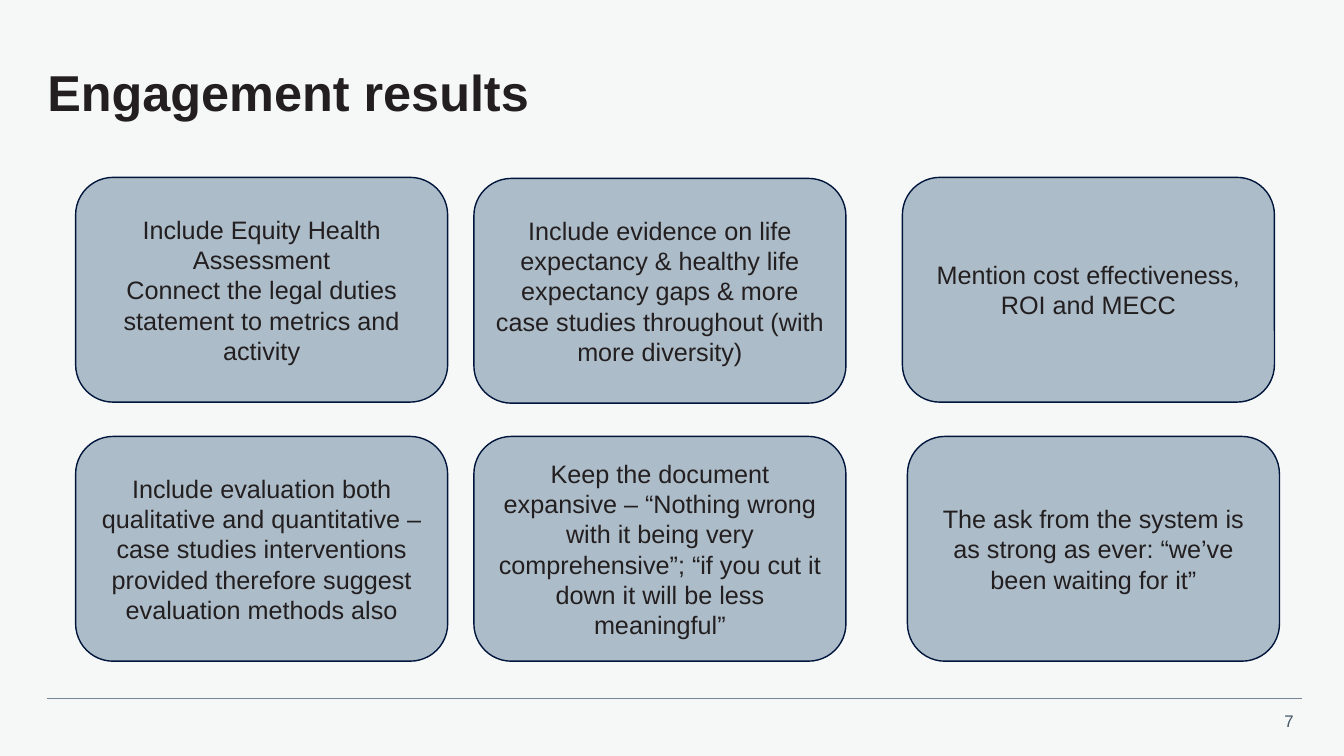
from dataclasses import dataclass

from lxml import etree
from pptx import Presentation
from pptx import util as u
from pptx.dml.color import RGBColor
from pptx.enum import shapes, text
from pptx.oxml import ns
from pptx.slide import Slide
from pptx.text.text import TextFrame

COLORS = {
    "back": "F6F8F8",
    "ink": "231F20",
    "card": "ACBCC8",
    "edge": "00153B",
    "rule": "768692",
    "page": "425563",
}
CARD_W, CARD_H = 3.69, 2.23
TOP, LOW = 1.76, 4.33
LEFT, MID = 0.75, 4.7


@dataclass
class Card:
    x: float
    y: float
    words: str


CARDS = [
    Card(LEFT, TOP, "Include Equity Health Assessment\n"
                    "Connect the legal duties statement to metrics and activity"),
    Card(MID, TOP + 0.01, "Include evidence on life expectancy & healthy life expectancy "
                          "gaps & more case studies throughout (with more diversity)"),
    Card(8.95, TOP, "Mention cost effectiveness, ROI and MECC"),
    Card(LEFT, LOW, "Include evaluation both qualitative and quantitative –case studies "
                    "interventions provided therefore suggest evaluation methods also"),
    Card(MID, LOW, "Keep the document expansive – “Nothing wrong with it being very "
                   "comprehensive”; “if you cut it down it will be less meaningful”"),
    Card(9, LOW, "The ask from the system is as strong as ever: “we’ve been waiting for it”"),
]


def color(name: str) -> RGBColor:
    return RGBColor.from_string(COLORS[name])


def write(frame: TextFrame, words: str, size: float, ink: str,
          align: text.PP_ALIGN, bold: bool = False) -> None:
    frame.word_wrap = True
    frame.text = words
    for para in frame.paragraphs:
        para.alignment = align
        for run in para.runs:
            run.font.name = "Arial"
            run.font.size = u.Pt(size)
            run.font.bold = bold
            run.font.color.rgb = color(ink)


def add_title(slide: Slide) -> None:
    box = slide.shapes.add_textbox(u.Inches(0.47), u.Inches(0.47),
                                   u.Inches(12.47), u.Inches(0.95))
    frame = box.text_frame
    frame.margin_left = frame.margin_right = 0
    frame.margin_top = frame.margin_bottom = 0
    frame.vertical_anchor = text.MSO_ANCHOR.MIDDLE
    write(frame, "Engagement results", 36, "ink", text.PP_ALIGN.LEFT, bold=True)
    frame.paragraphs[0].line_spacing = 0.9


def add_card(slide: Slide, card: Card) -> None:
    shape = slide.shapes.add_shape(
        shapes.MSO_SHAPE.ROUNDED_RECTANGLE, u.Inches(card.x), u.Inches(card.y),
        u.Inches(CARD_W), u.Inches(CARD_H))
    shape.shadow.inherit = False
    shape.fill.solid()
    shape.fill.fore_color.rgb = color("card")
    shape.line.color.rgb = color("edge")
    shape.line.width = u.Pt(1)
    shape.text_frame.vertical_anchor = text.MSO_ANCHOR.MIDDLE
    write(shape.text_frame, card.words, 18, "ink", text.PP_ALIGN.CENTER)


def add_footer(slide: Slide) -> None:
    """Draw the rule and the page number below it."""
    rule = slide.shapes.add_connector(
        shapes.MSO_CONNECTOR.STRAIGHT, u.Inches(0.47), u.Inches(6.93),
        u.Inches(12.91), u.Inches(6.93))
    rule.line.color.rgb = color("rule")
    rule.line.width = u.Pt(0.5)
    etree.SubElement(rule._element.spPr, ns.qn("a:effectLst"))
    page = slide.shapes.add_textbox(u.Inches(12.52), u.Inches(7),
                                    u.Inches(0.41), u.Inches(0.3))
    write(page.text_frame, "7", 12, "page", text.PP_ALIGN.RIGHT)


def main() -> None:
    deck = Presentation()
    deck.slide_width, deck.slide_height = u.Inches(13.33), u.Inches(7.5)
    slide = deck.slides.add_slide(deck.slide_layouts[6])
    slide.background.fill.solid()
    slide.background.fill.fore_color.rgb = color("back")
    add_footer(slide)
    add_title(slide)
    for card in CARDS:
        add_card(slide, card)
    deck.save("out.pptx")


if __name__ == "__main__":
    main()
